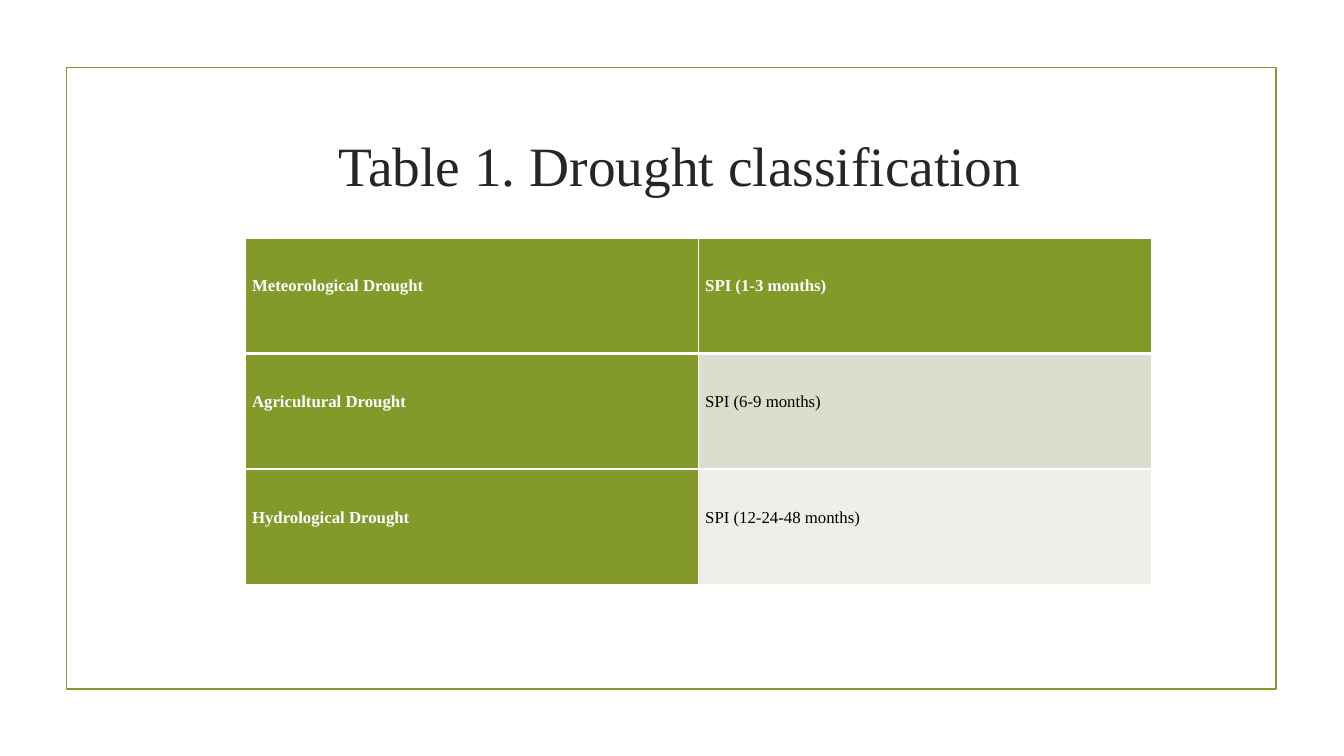
import dataclasses
import typing

import lxml.etree
import pptx
import pptx.dml.color
import pptx.enum.shapes
import pptx.enum.text
import pptx.oxml.ns
import pptx.util

WIDTH, HEIGHT = pptx.util.Inches(13.33), pptx.util.Inches(7.5)
FONT = "Times New Roman"
GREEN, WHITE, BLACK = "83992A", "FFFFFF", "000000"


@dataclasses.dataclass(frozen=True)
class Area:
    """A rectangle in percent of the slide's width and height."""
    left: float
    top: float
    width: float
    height: float

    def lengths(self) -> tuple[int, int, int, int]:
        return (round(WIDTH * self.left / 100), round(HEIGHT * self.top / 100),
                round(WIDTH * self.width / 100), round(HEIGHT * self.height / 100))


@dataclasses.dataclass(frozen=True)
class DroughtRow:
    drought: str
    index: str
    index_fill: str


FRAME = Area(4.95, 8.93, 90, 82.27)
TITLE = Area(11.18, 15.73, 78.77, 19.07)
TABLE = Area(18.23, 31.47, 67.44, 45.87)
ROWS = [
    DroughtRow("Meteorological Drought", "SPI (1-3 months)", GREEN),
    DroughtRow("Agricultural Drought", "SPI (6-9 months)", "D9DECD"),
    DroughtRow("Hydrological Drought", "SPI (12-24-48 months)", "EDEFE8"),
]


def color(value: str) -> pptx.dml.color.RGBColor:
    return pptx.dml.color.RGBColor.from_string(value)


def apply(target: typing.Any, values: dict[str, typing.Any]) -> None:
    for name, value in values.items():
        setattr(target, name, value)


def write(frame: typing.Any, text: str, size: float, ink: str, bold: bool,
          layout: dict[str, typing.Any]) -> None:
    para = frame.paragraphs[0]
    apply(para, layout)
    span = para.add_run()
    span.text = text
    apply(span.font, {"name": FONT, "size": pptx.util.Pt(size), "bold": bold})
    span.font.color.rgb = color(ink)


def add_borders(cell: typing.Any, widths: dict[str, float]) -> None:
    properties = cell._tc.get_or_add_tcPr()
    for position, (side, points) in enumerate(widths.items()):
        line = lxml.etree.Element(pptx.oxml.ns.qn(f"a:{side}"), w=str(pptx.util.Pt(points)))
        fill = lxml.etree.SubElement(line, pptx.oxml.ns.qn("a:solidFill"))
        lxml.etree.SubElement(fill, pptx.oxml.ns.qn("a:srgbClr"), val=WHITE)
        properties.insert(position, line)


def add_frame(page: typing.Any) -> None:
    box = page.shapes.add_shape(pptx.enum.shapes.MSO_SHAPE.RECTANGLE, *FRAME.lengths())
    box.shadow.inherit = False
    box.fill.background()
    box.line.color.rgb = color(GREEN)
    box.line.width = pptx.util.Pt(1.25)


def add_title(page: typing.Any) -> None:
    box = page.shapes.add_textbox(*TITLE.lengths())
    apply(box.text_frame, {"word_wrap": True, "margin_top": pptx.util.Inches(0.12),
                           "vertical_anchor": pptx.enum.text.MSO_ANCHOR.TOP})
    write(box.text_frame, "Table 1. Drought classification", 39.6, "262626", False,
          {"alignment": pptx.enum.text.PP_ALIGN.CENTER})


def add_drought_table(page: typing.Any) -> None:
    table = page.shapes.add_table(len(ROWS), 2, *TABLE.lengths()).table
    apply(table, {"first_col": True, "horz_banding": False})
    side_margin = pptx.util.Inches(0.07)
    margins = {"margin_left": side_margin, "margin_right": side_margin,
               "margin_top": pptx.util.Inches(0.36), "margin_bottom": 0}
    layout = {"alignment": pptx.enum.text.PP_ALIGN.JUSTIFY, "line_spacing": 1.15,
              "space_after": pptx.util.Pt(10)}
    for number, row in enumerate(ROWS):
        entries = [(row.drought, GREEN), (row.index, row.index_fill)]
        for column, (text, fill) in enumerate(entries):
            cell = table.cell(number, column)
            apply(cell, margins)
            cell.fill.solid()
            cell.fill.fore_color.rgb = color(fill)
            # A thick rule separates the header from the body
            add_borders(cell, {"lnL": 1, "lnR": 1, "lnT": 3 if number == 1 else 1,
                               "lnB": 3 if number == 0 else 1})
            strong = fill == GREEN
            write(cell.text_frame, text, 12, WHITE if strong else BLACK, strong, layout)


def main() -> None:
    deck = pptx.Presentation()
    apply(deck, {"slide_width": WIDTH, "slide_height": HEIGHT})
    page = deck.slides.add_slide(deck.slide_layouts[6])
    # Frame, heading and table, from back to front
    add_frame(page)
    add_title(page)
    add_drought_table(page)
    deck.save("out.pptx")


if __name__ == "__main__":
    main()
